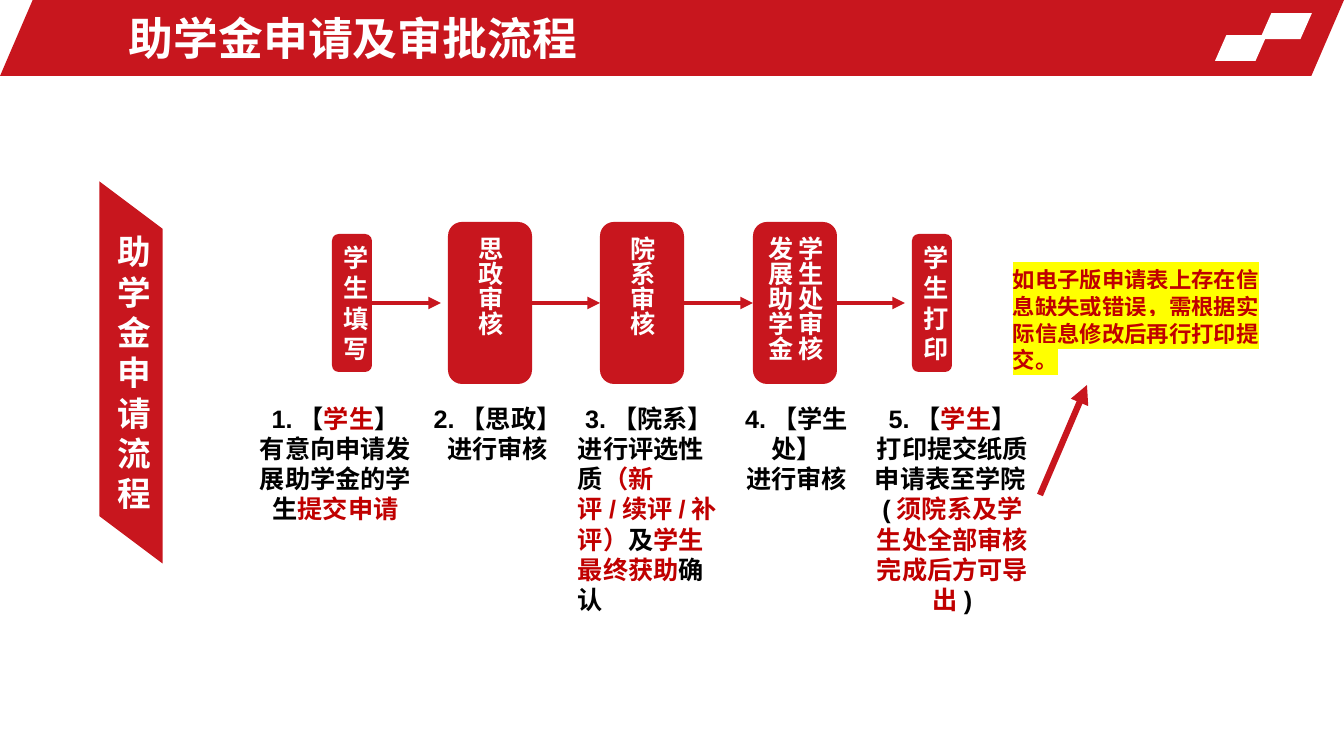
"""Builds the slide on the grant application and approval process."""
from lxml import etree
from pptx import Presentation
from pptx.dml.color import RGBColor
from pptx.enum.shapes import MSO_CONNECTOR, MSO_SHAPE
from pptx.enum.text import MSO_ANCHOR, MSO_AUTO_SIZE, PP_ALIGN
from pptx.oxml.ns import qn
from pptx.util import Pt

PARALLELOGRAM = MSO_SHAPE.PARALLELOGRAM
ROUNDED = MSO_SHAPE.ROUNDED_RECTANGLE
STRAIGHT = MSO_CONNECTOR.STRAIGHT
CENTER, LEFT = PP_ALIGN.CENTER, PP_ALIGN.LEFT
TOP, MIDDLE = MSO_ANCHOR.TOP, MSO_ANCHOR.MIDDLE
GROW = MSO_AUTO_SIZE.SHAPE_TO_FIT_TEXT

PX = 914400 / 100.8
RED, DARK_RED, WHITE, BLACK, YELLOW = "C8161E", "C00000", "FFFFFF", "000000", "FFFF00"
LATIN_FONT, CHINESE_FONT = "Arial", "Noto Sans CJK SC"
LINE_PITCH = 1.2
FLOW_Y = 303
CAPTION_TOP = 398
NARROW, WIDE = (40, 138), (84, 162)

TITLE = "助学金申请及审批流程"
BANNER = "助学金申请流程"
REMINDER = "如电子版申请表上存在信息缺失或错误，需根据实际信息修改后再行打印提交。"
HEADER_PARTS = [
    ((0, 0, 1344, 76), 0.43, RED),
    ((1260, 13, 52, 26), 0.44, WHITE),
    ((1215, 35, 52, 26), 0.44, WHITE),
]
STEPS = [
    {"left": 332, "size": NARROW, "vertical": None, "label": ["学生填写"],
     "caption": (244, 183, 132),
     "lines": [(CENTER, [("1.【", BLACK), ("学生", DARK_RED), ("】", BLACK)]),
               (CENTER, [("有意向申请发展助学金的学生", BLACK), ("提交申请", DARK_RED)])]},
    {"left": 448, "size": WIDE, "vertical": "eaVert", "label": ["思政审核"],
     "caption": (423, 149, 72),
     "lines": [(CENTER, [("2.【思政】", BLACK)]), (CENTER, [("进行审核", BLACK)])]},
    {"left": 600, "size": WIDE, "vertical": "eaVert", "label": ["院系审核"],
     "caption": (568, 162, 194),
     "lines": [(CENTER, [("3.【院系】", BLACK)]),
               (LEFT, [("进行评选性质", BLACK), ("（新评/续评/补评）", DARK_RED), ("及", BLACK),
                       ("学生最终获助", DARK_RED), ("确认", BLACK)])]},
    {"left": 753, "size": WIDE, "vertical": "eaVert", "label": ["学生处审核", "发展助学金"],
     "caption": (722, 149, 72),
     "lines": [(CENTER, [("4.【学生处】", BLACK)]), (CENTER, [("进行审核", BLACK)])]},
    {"left": 912, "size": NARROW, "vertical": None, "label": ["学生打印"],
     "caption": (865, 175, 224),
     "lines": [(CENTER, [("5.【", BLACK), ("学生", DARK_RED), ("】", BLACK)]),
               (CENTER, [("打印提交纸质申请表至学院(", BLACK),
                         ("须院系及学生处全部审核完成后方可导出", DARK_RED), (")", BLACK)])]},
]
ARROW_ENDS = [441, 600, 753, 905]


def px(*values):
    return [round(value * PX) for value in values]


def color(text):
    return RGBColor.from_string(text)


def write(shape, lines, size, anchor, font=LATIN_FONT, highlight=None, vertical=None):
    frame = shape.text_frame
    frame.word_wrap = True
    frame.vertical_anchor = anchor
    if vertical:
        frame._txBody.bodyPr.set("vert", vertical)
    for index, (alignment, runs) in enumerate(lines):
        paragraph = frame.paragraphs[0] if index == 0 else frame.add_paragraph()
        paragraph.alignment = alignment
        paragraph.line_spacing = Pt(size * LINE_PITCH)
        for text, ink in runs:
            run = paragraph.add_run()
            run.text = text
            run.font.size = Pt(size)
            run.font.bold = True
            run.font.color.rgb = color(ink)
            properties = run._r.get_or_add_rPr()
            if highlight:
                mark = etree.SubElement(properties, qn("a:highlight"))
                etree.SubElement(mark, qn("a:srgbClr")).set("val", highlight)
            run.font.name = font
            etree.SubElement(properties, qn("a:ea")).set("typeface", CHINESE_FONT)


def add_block(shapes, kind, box, fill, adjustment=None):
    shape = shapes.add_shape(kind, *px(*box))
    shape.shadow.inherit = False
    shape.fill.solid()
    shape.fill.fore_color.rgb = color(fill)
    shape.line.fill.background()
    if adjustment is not None:
        shape.adjustments[0] = adjustment
    return shape


def add_text(shapes, box, lines, size, anchor=TOP, grow=True, **options):
    shape = shapes.add_textbox(*px(*box))
    write(shape, lines, size, anchor, **options)
    if grow:
        shape.text_frame.auto_size = GROW


def add_arrow(shapes, start, end, width):
    arrow = shapes.add_connector(STRAIGHT, *px(*start, *end))
    arrow.line.color.rgb = color(RED)
    arrow.line.width = Pt(width)
    etree.SubElement(arrow.line._get_or_add_ln(), qn("a:tailEnd")).set("type", "triangle")
    etree.SubElement(arrow._element.spPr, qn("a:effectLst"))
    return arrow


def add_step(shapes, step):
    group = shapes.add_group_shape().shapes
    width, height = step["size"]
    box = add_block(group, ROUNDED, (step["left"], FLOW_Y - height / 2, width, height), RED)
    label = [(CENTER, [(text, WHITE)]) for text in step["label"]]
    write(box, label, 18, MIDDLE, vertical=step["vertical"])
    left, caption_width, caption_height = step["caption"]
    add_text(group, (left, CAPTION_TOP, caption_width, caption_height), step["lines"], 18)
    return box


def main():
    presentation = Presentation()
    presentation.slide_width, presentation.slide_height = px(1344, 756)
    shapes = presentation.slides.add_slide(presentation.slide_layouts[6]).shapes

    for box, slant, fill in HEADER_PARTS:
        add_block(shapes, PARALLELOGRAM, box, fill, slant)
    add_text(shapes, (119, 5, 969, 66), [(LEFT, [(TITLE, WHITE)])], 32, MIDDLE, grow=False)

    banner = add_block(shapes, PARALLELOGRAM, (-60, 341, 382, 63), RED, 0.75)
    banner.rotation = 90
    write(banner, [(CENTER, [(BANNER, WHITE)])], 24, MIDDLE, vertical="vert270")

    boxes = [add_step(shapes, step) for step in STEPS]
    for index, end in enumerate(ARROW_ENDS):
        start = STEPS[index]["left"] + STEPS[index]["size"][0]
        arrow = add_arrow(shapes, (start, FLOW_Y), (end, FLOW_Y), 3)
        arrow.begin_connect(boxes[index], 3)
        if end == STEPS[index + 1]["left"]:
            arrow.end_connect(boxes[index + 1], 1)

    add_text(shapes, (1003, 261, 277, 119), [(LEFT, [(REMINDER, DARK_RED)])], 16,
             font=CHINESE_FONT, highlight=YELLOW)
    add_arrow(shapes, (1040, 495), (1087, 385), 4.5)
    presentation.save("out.pptx")


if __name__ == "__main__":
    main()
